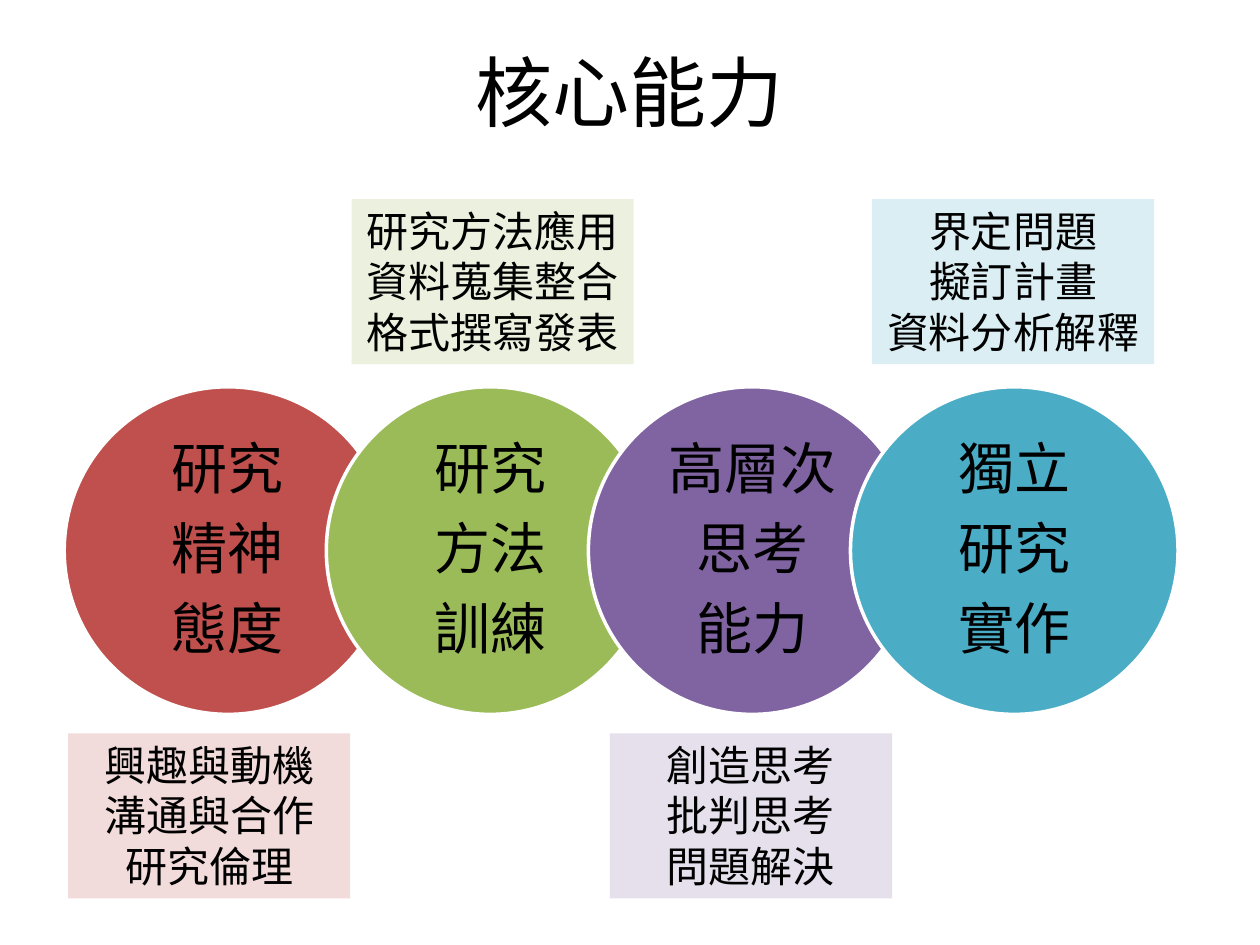
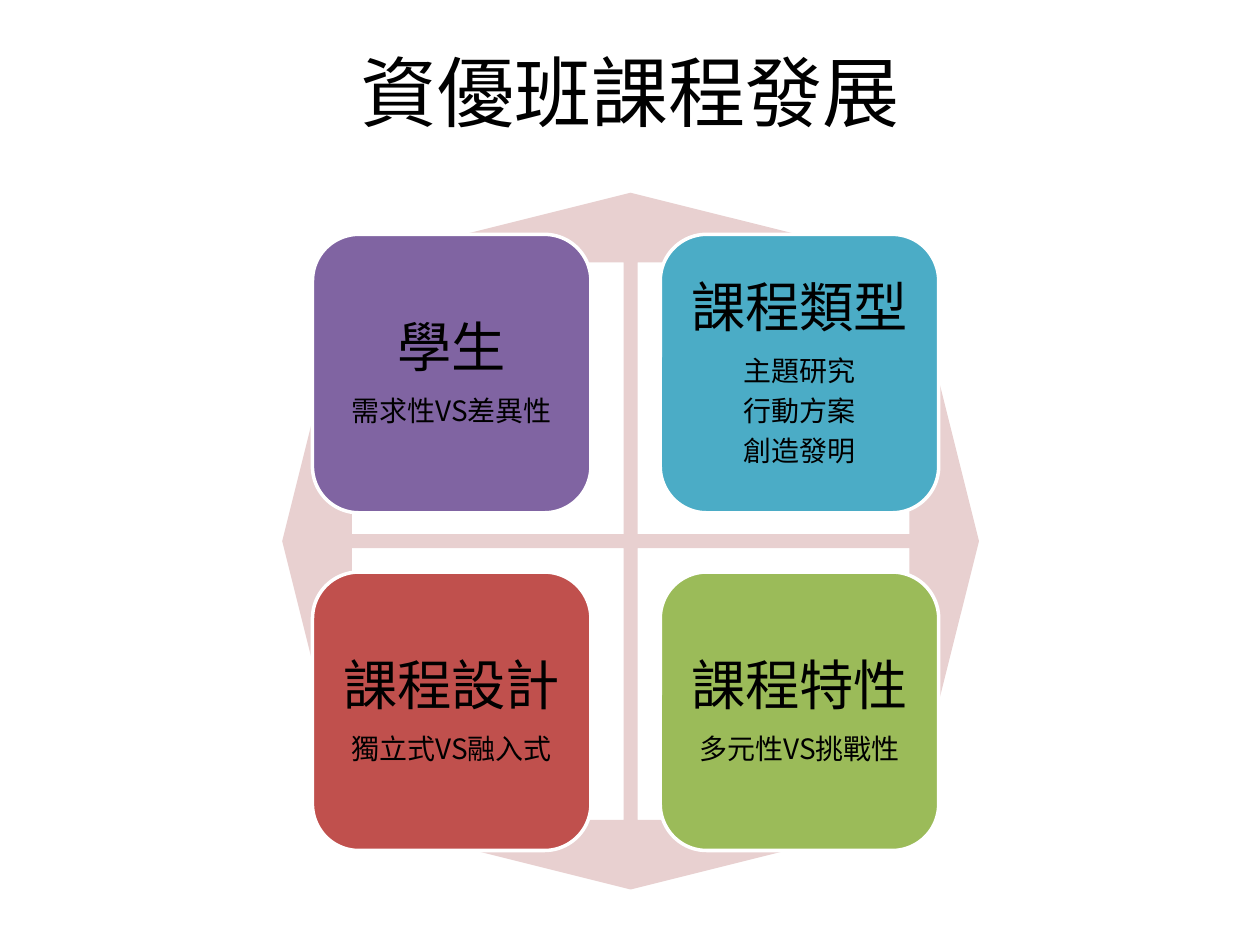
from dataclasses import dataclass
from itertools import product

from lxml.etree import SubElement
from pptx import Presentation
from pptx.dml.color import RGBColor
from pptx.enum.shapes import MSO_SHAPE
from pptx.enum.text import MSO_ANCHOR, PP_ALIGN
from pptx.oxml.ns import qn
from pptx.util import Inches, Pt


@dataclass(frozen=True)
class Theme:
    """Colours, type sizes and font of the deck."""
    face: str = "Noto Sans CJK SC"
    ink: str = "000000"
    edge: str = "FFFFFF"
    red: str = "C0504D"
    green: str = "9BBB59"
    violet: str = "8064A2"
    teal: str = "4BACC6"
    rose: str = "F2DCDB"
    lime: str = "EBF1DE"
    lilac: str = "E6E0EC"
    sky: str = "DBEEF4"
    cross: str = "E8D0D0"
    title: int = 44
    disc: int = 32
    note: int = 24
    head: int = 31
    body: int = 16


THEME = Theme()


@dataclass(frozen=True)
class Box:
    """Left, top, width and height in inches."""
    left: float
    top: float
    width: float
    height: float

    def place(self) -> tuple:
        """Give the four lengths."""
        return tuple(map(Inches, (self.left, self.top, self.width, self.height)))


@dataclass(frozen=True)
class Skill:
    """A core skill with its note."""
    lines: tuple
    fill: str
    notes: tuple
    tint: str
    left: float


@dataclass(frozen=True)
class Card:
    """A course topic with its points."""
    head: str
    points: tuple
    fill: str


SKILLS = (
    Skill(("研究", "精神", "態度"), THEME.red,
          ("興趣與動機", "溝通與合作", "研究倫理"), THEME.rose, 0.54),
    Skill(("研究", "方法", "訓練"), THEME.green,
          ("研究方法應用", "資料蒐集整合", "格式撰寫發表"), THEME.lime, 2.79),
    Skill(("高層次", "思考", "能力"), THEME.violet,
          ("創造思考", "批判思考", "問題解決"), THEME.lilac, 4.84),
    Skill(("獨立", "研究", "實作"), THEME.teal,
          ("界定問題", "擬訂計畫", "資料分析解釋"), THEME.sky, 6.92),
)

CARDS = (
    Card("學生", ("需求性VS差異性",), THEME.violet),
    Card("課程類型", ("主題研究", "行動方案", "創造發明"), THEME.teal),
    Card("課程設計", ("獨立式VS融入式",), THEME.red),
    Card("課程特性", ("多元性VS挑戰性",), THEME.green),
)

TOP = {"word_wrap": True, "vertical_anchor": MSO_ANCHOR.TOP}
MID = {"word_wrap": True, "vertical_anchor": MSO_ANCHOR.MIDDLE,
       "margin_left": 0, "margin_right": 0, "margin_top": 0, "margin_bottom": 0}


def apply(item, form: dict) -> None:
    """Set each format value on the item."""
    for name, value in form.items():
        setattr(item, name, value)


def write(shape, rows: list, form: dict, pitch: float = 1.2, gap: float = 0) -> None:
    """Write rows of text and size as centred paragraphs."""
    frame = shape.text_frame
    apply(frame, form)
    for index, (text, size) in enumerate(rows):
        para = frame.add_paragraph() if index else frame.paragraphs[0]
        apply(para, {"alignment": PP_ALIGN.CENTER, "line_spacing": Pt(size * pitch),
                     "space_before": Pt(0), "space_after": Pt(size * gap)})
        run = para.add_run()
        run.text = text
        apply(run.font, {"size": Pt(size), "name": THEME.face})
        run.font.color.rgb = RGBColor.from_string(THEME.ink)
        SubElement(run.font._element, qn("a:ea"), typeface=THEME.face)


def draw(slide, kind: MSO_SHAPE, box: Box, fill: str, edge: bool = False):
    """Add a filled shape, with a white edge if asked."""
    shape = slide.shapes.add_shape(kind, *box.place())
    shape.shadow.inherit = False
    shape.fill.solid()
    shape.fill.fore_color.rgb = RGBColor.from_string(fill)
    if edge:
        shape.line.color.rgb = RGBColor.from_string(THEME.edge)
        shape.line.width = Pt(2)
    else:
        shape.line.fill.background()
    return shape


def start(deck, title: str):
    """Add a blank slide with a title."""
    slide = deck.slides.add_slide(deck.slide_layouts[6])
    label = slide.shapes.add_textbox(*Box(0.5, 0.3, 9, 1.25).place())
    write(label, [(title, THEME.title)], TOP)
    return slide


def skills(deck) -> None:
    """Draw the chain of discs and their notes."""
    slide = start(deck, "核心能力")
    side = 2.6
    step = side * 0.8
    for index, skill in enumerate(SKILLS):
        box = Box(0.51 + index * step, 3.07, side, side)
        disc = draw(slide, MSO_SHAPE.OVAL, box, skill.fill, True)
        write(disc, [(line, THEME.disc) for line in skill.lines], MID, 1.08, 0.35)
    for index, skill in enumerate(SKILLS):
        box = Box(skill.left, 1.58 if index % 2 else 5.82, 2.24, 1.31)
        note = draw(slide, MSO_SHAPE.RECTANGLE, box, skill.tint)
        write(note, [(line, THEME.note) for line in skill.notes], TOP)


def course(deck) -> None:
    """Draw the four cards on a cross of arrows."""
    slide = start(deck, "資優班課程發展")
    cross = draw(slide, MSO_SHAPE.QUAD_ARROW, Box(2.24, 1.53, 5.53, 5.53), THEME.cross)
    for index, value in enumerate((0.02, 0.4, 0.1)):
        cross.adjustments[index] = value
    for card, (top, left) in zip(CARDS, product((1.86, 4.54), (2.48, 5.24))):
        tile = draw(slide, MSO_SHAPE.ROUNDED_RECTANGLE, Box(left, top, 2.21, 2.21),
                    card.fill, True)
        rows = [(card.head, THEME.head), *((text, THEME.body) for text in card.points)]
        write(tile, rows, MID, 1.08, 0.35)


def main() -> None:
    """Build and save the deck."""
    deck = Presentation()
    apply(deck, {"slide_width": Inches(10), "slide_height": Inches(7.5)})
    skills(deck)
    course(deck)
    deck.save("out.pptx")


if __name__ == "__main__":
    main()
